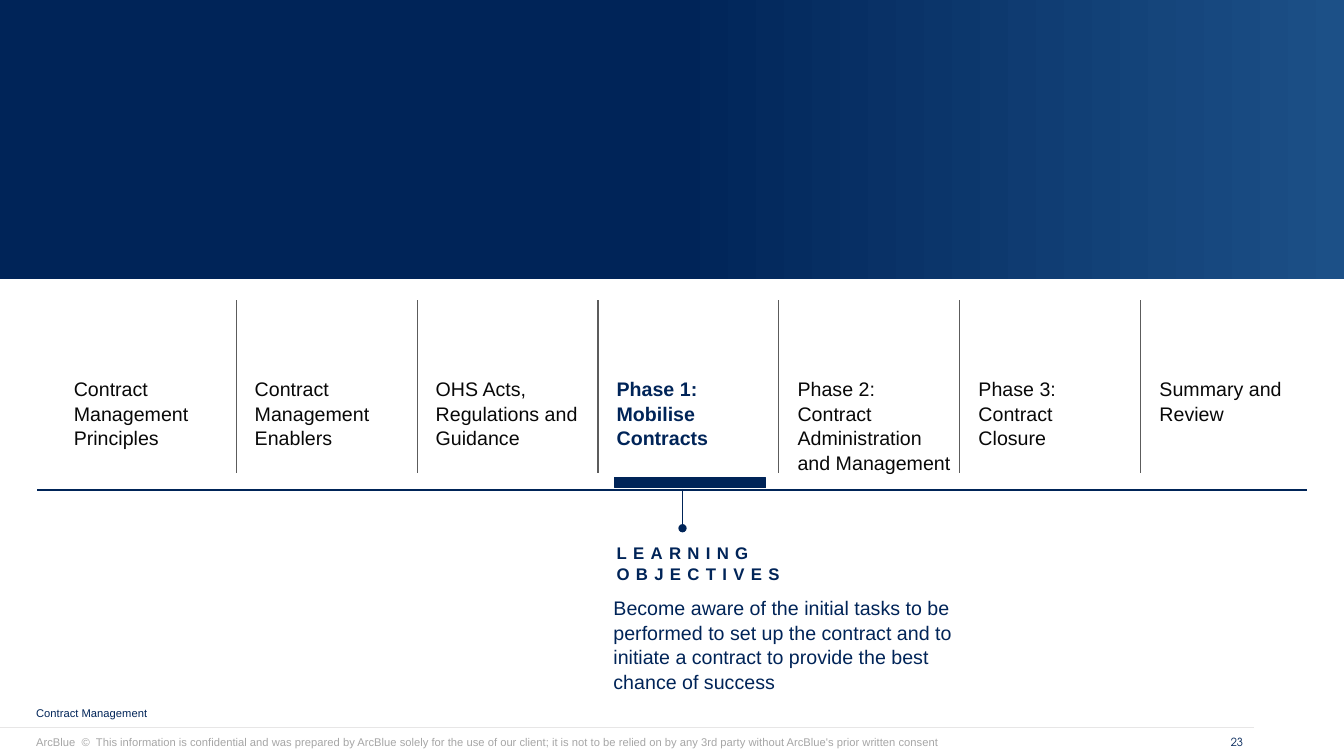
from dataclasses import dataclass

from lxml.etree import SubElement
from pptx import Presentation
from pptx.dml.color import RGBColor as RGB
from pptx.enum.shapes import MSO_CONNECTOR as Connector, MSO_SHAPE as Shape
from pptx.enum.text import MSO_ANCHOR as Anchor, PP_ALIGN as Align
from pptx.oxml.ns import qn
from pptx.util import Cm, Pt


@dataclass(frozen=True)
class Theme:
    navy: RGB = RGB.from_string("002458")
    blue: RGB = RGB.from_string("1C5087")
    ink: RGB = RGB.from_string("080808")
    divider: RGB = RGB.from_string("5C5C5C")
    rule: RGB = RGB.from_string("E7E6E6")
    muted: RGB = RGB.from_string("A6A6A6")
    font: str = "Arial"
    number_font: str = "TeX Gyre Adventor"
    body: int = 14
    heading: int = 12
    small: int = 8


theme = Theme()
deck = Presentation()
deck.slide_width, deck.slide_height = Cm(33.87), Cm(19.05)
slide = deck.slides.add_slide(deck.slide_layouts[6])


def add_text(text, *, at, size, color=theme.navy, font=theme.font, bold=False,
             align=Align.LEFT, anchor=Anchor.TOP, insets=(0.25, 0.13), spacing=None):
    box = slide.shapes.add_textbox(*map(Cm, at))
    frame = box.text_frame
    frame.word_wrap = True
    frame.vertical_anchor = anchor
    frame.margin_left = frame.margin_right = Cm(insets[0])
    frame.margin_top = frame.margin_bottom = Cm(insets[1])
    paragraph = frame.paragraphs[0]
    paragraph.text = text
    paragraph.alignment = align
    paragraph.line_spacing = 1.05
    for run in paragraph.runs:
        run.font.name, run.font.size, run.font.bold = font, Pt(size), bold
        run.font.color.rgb = color
        if spacing:
            run.font._element.set("spc", str(spacing))


def add_line(x1, y1, x2, y2, color, width=0.75):
    line = slide.shapes.add_connector(Connector.STRAIGHT, Cm(x1), Cm(y1), Cm(x2), Cm(y2))
    line.line.color.rgb = color
    line.line.width = Pt(width)
    SubElement(line._element.spPr, qn("a:effectLst"))
    return line


# Banner, solid to the middle and then fading to blue
banner = slide.shapes.add_shape(Shape.RECTANGLE, 0, 0, deck.slide_width, Cm(7.02))
banner.shadow.inherit = False
banner.line.fill.background()
banner.fill.gradient()
banner.fill.gradient_angle = 0
for stop, color, position in zip(banner.fill.gradient_stops, (theme.navy, theme.blue), (0.5, 1)):
    stop.color.rgb = color
    stop.position = position

# Course sections along the timeline
sections = [
    "Contract Management Principles",
    "Contract Management Enablers",
    "OHS Acts, Regulations and Guidance",
    "Phase 1: Mobilise Contracts",
    "Phase 2: \vContract Administration and Management",
    "Phase 3: Contract Closure",
    "Summary and Review",
]
current, widest = 3, 4
pitch = 4.56
for i, section in enumerate(sections):
    active = i == current
    add_text(section, at=(1.76 + i * pitch, 9.37, 4.19 if i == widest else 3.85, 2.59),
             size=theme.body, color=theme.navy if active else theme.ink, bold=active,
             insets=(0.1, 0.1))
    if i:
        divider_x = 5.95 + (i - 1) * pitch
        add_line(divider_x, 7.57, divider_x, 11.91, theme.divider)

# Timeline with the current section marked
add_line(0.94, 12.34, 32.94, 12.34, theme.navy, 1.5)
marker = slide.shapes.add_shape(Shape.RECTANGLE, Cm(15.49), Cm(12.04), Cm(3.81), Cm(0.25))
marker.shadow.inherit = False
marker.fill.solid()
marker.fill.fore_color.rgb = marker.line.color.rgb = theme.navy
marker.line.width = Pt(0.75)
pointer = add_line(17.2, 12.32, 17.2, 13.31, theme.navy)
SubElement(pointer.line._get_or_add_ln(), qn("a:tailEnd"), type="oval")

# Learning objectives
add_text("LEARNING OBJECTIVES", at=(15.49, 13.56, 4.57, 1.17), size=theme.heading,
         bold=True, insets=(0.05, 0.08), spacing=450)
add_text("Become aware of the initial tasks to be performed to set up the contract and to "
         "initiate a contract to provide the best chance of success",
         at=(15.21, 14.86, 9.37, 2.7), size=theme.body)

# Footer
add_text("Contract Management", at=(0.66, 17.65, 23.77, 0.61), size=theme.small)
add_line(0, 18.34, 31.6, 18.34, theme.rule)
add_text("ArcBlue  ©  This information is confidential and was prepared by ArcBlue solely for "
         "the use of our client; it is not to be relied on by any 3rd party without ArcBlue's "
         "prior written consent",
         at=(0.66, 18.39, 23.77, 0.61), size=theme.small, color=theme.muted)
add_text("23", at=(30.28, 18.39, 1.3, 0.61), size=theme.small, font=theme.number_font,
         align=Align.RIGHT, anchor=Anchor.MIDDLE)

deck.save("out.pptx")
